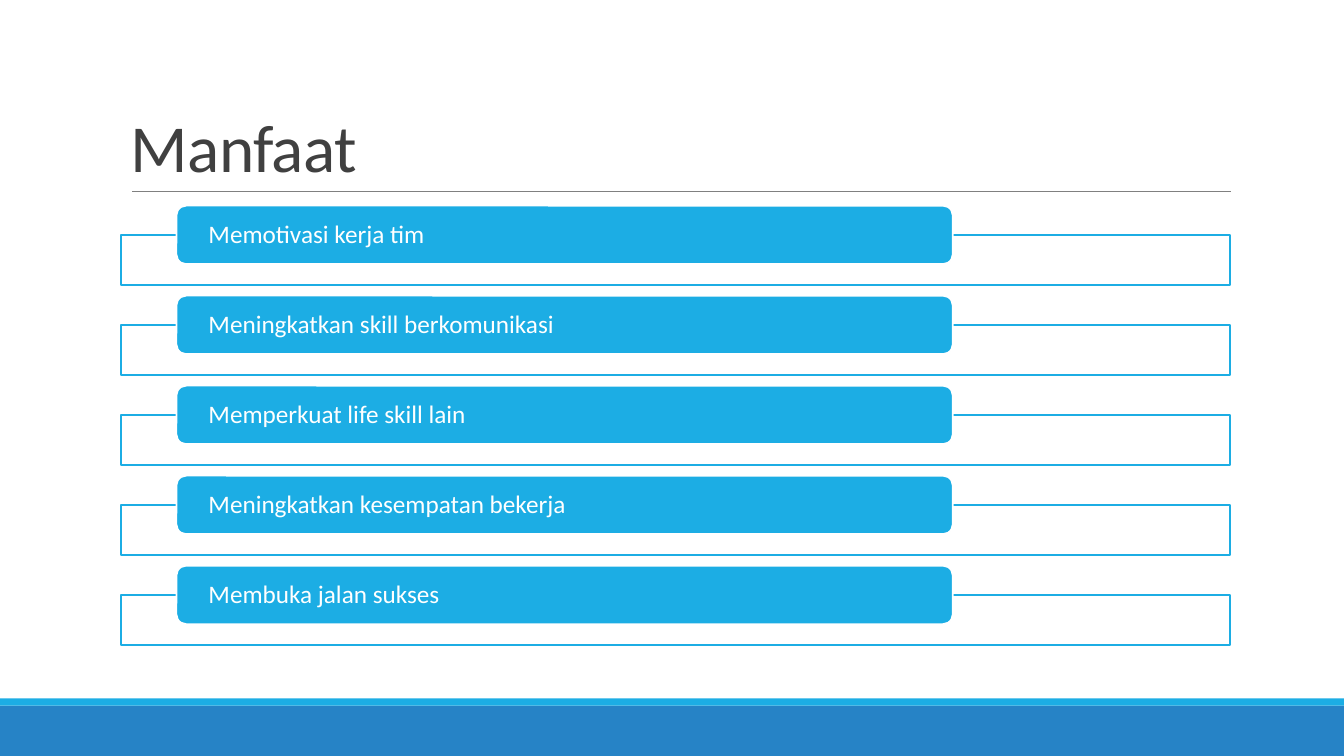
import pptx
import pptx.util
import pptx.dml.color
import pptx.enum.shapes
import pptx.enum.text
import pptx.oxml.ns
import lxml.etree

TITLE = "Manfaat"
ITEMS = [
    "Memotivasi kerja tim",
    "Meningkatkan skill berkomunikasi",
    "Memperkuat life skill lain",
    "Meningkatkan kesempatan bekerja",
    "Membuka jalan sukses",
]
HUES = {"sky": "1CADE4", "blue": "2683C6", "white": "FFFFFF", "dark": "404040", "gray": "808080"}
WIDE, HIGH = 13.33, 7.5
LEFT, SPAN = 1.2, 11
TOP, PITCH = 2.04, 0.893
DROP, FRAME = 0.29, 0.5
INDENT, TAB = 0.55, 0.58
BANDS = [("blue", 7, 0.5), ("sky", 6.93, 0.07)]
KINDS = pptx.enum.shapes.MSO_SHAPE
ANCHOR = pptx.enum.text.MSO_ANCHOR
HEAD = {"size": 48, "hue": "dark", "space": 0.85, "anchor": ANCHOR.BOTTOM, "sides": 0.1, "ends": 0.05}
LABEL = {"size": 18, "hue": "white", "space": 0.9, "anchor": ANCHOR.MIDDLE, "sides": 0.29, "ends": 0}

inch = pptx.util.Inches
qn = pptx.oxml.ns.qn


def tint(hue):
    return pptx.dml.color.RGBColor.from_string(HUES[hue])


def box(slide, kind, area, fill, edge=None):
    shape = slide.shapes.add_shape(kind, *map(inch, area))
    shape.shadow.inherit = False
    shape.fill.solid()
    shape.fill.fore_color.rgb = tint(fill)
    if edge:
        shape.line.color.rgb = tint(edge)
        shape.line.width = pptx.util.Pt(1.25)
    else:
        shape.line.fill.background()
    return shape


def write(shape, text, look):
    frame = shape.text_frame
    sides, ends = inch(look["sides"]), inch(look["ends"])
    form = {
        "word_wrap": True,
        "vertical_anchor": look["anchor"],
        "margin_left": sides,
        "margin_right": sides,
        "margin_top": ends,
        "margin_bottom": ends,
    }
    for name, value in form.items():
        setattr(frame, name, value)
    para = frame.paragraphs[0]
    para.alignment = pptx.enum.text.PP_ALIGN.LEFT
    para.line_spacing = look["space"]
    run = para.add_run()
    run.text = text
    for name, value in {"name": "Calibri", "size": pptx.util.Pt(look["size"])}.items():
        setattr(run.font, name, value)
    run.font.color.rgb = tint(look["hue"])
    return run


def rule(slide, start, end, level):
    ends = map(inch, (start, level, end, level))
    line = slide.shapes.add_connector(pptx.enum.shapes.MSO_CONNECTOR.STRAIGHT, *ends)
    line.line.color.rgb = tint("gray")
    line.line.width = pptx.util.Pt(0.5)
    lxml.etree.SubElement(line._element.spPr, qn("a:effectLst"))


def main():
    deck = pptx.Presentation()
    deck.slide_width, deck.slide_height = inch(WIDE), inch(HIGH)
    slide = deck.slides.add_slide(deck.slide_layouts[6])

    for hue, top, high in BANDS:
        box(slide, KINDS.RECTANGLE, (0, top, WIDE, high), hue)
    rule(slide, 1.31, 12.21, 1.9)
    head = slide.shapes.add_textbox(*map(inch, (LEFT, 0.31, SPAN, 1.59)))
    write(head, TITLE, HEAD).font._element.set("spc", "-50")

    for row, text in enumerate(ITEMS):
        top = TOP + row * PITCH
        pane = box(slide, KINDS.RECTANGLE, (LEFT, top + DROP, SPAN, FRAME), "white", "sky")
        color = pane._element.spPr.find(qn("a:solidFill"))[0]
        lxml.etree.SubElement(color, qn("a:alpha")).set("val", "90000")
        area = (LEFT + INDENT, top, SPAN * 0.7, TAB)
        write(box(slide, KINDS.ROUNDED_RECTANGLE, area, "sky", "white"), text, LABEL)

    deck.save("out.pptx")


if __name__ == "__main__":
    main()
